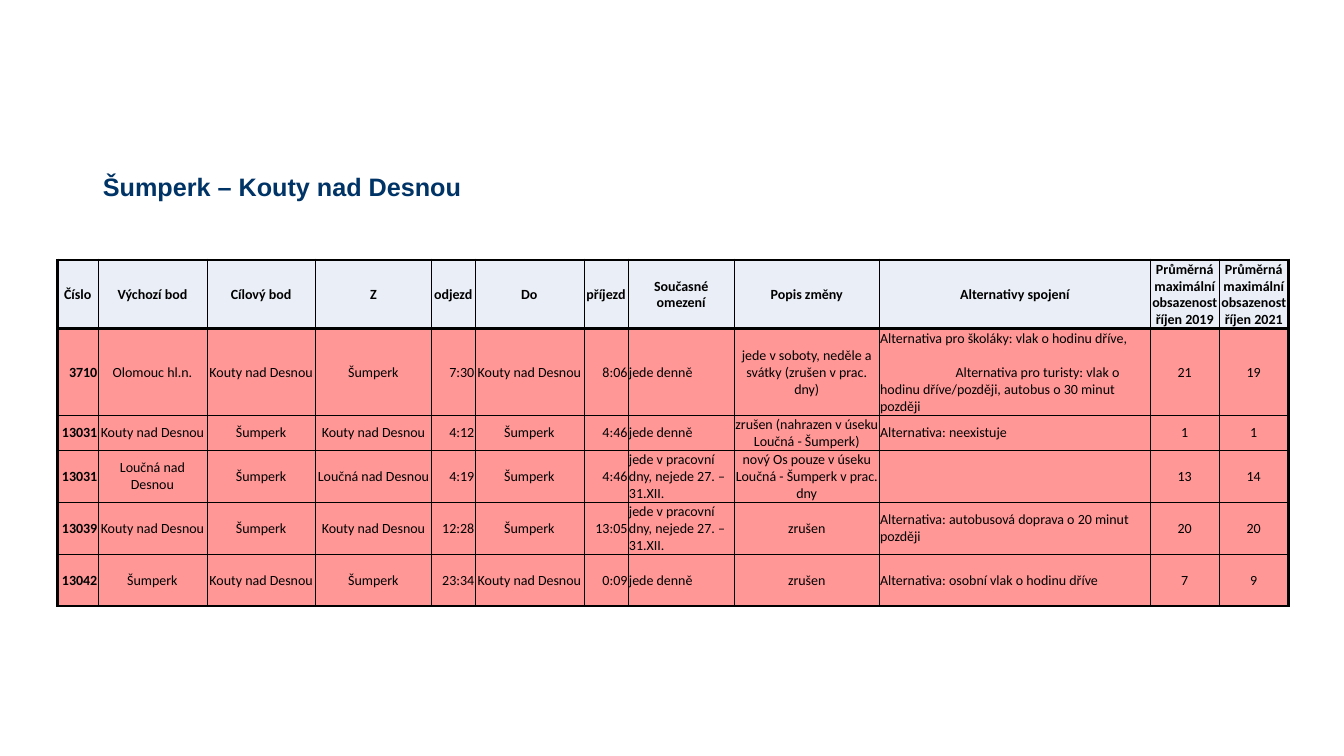
import pptx
import pptx.util
import pptx.dml.color
import pptx.enum.text
import pptx.oxml
import pptx.oxml.ns

Cm = pptx.util.Cm
Pt = pptx.util.Pt
RGBColor = pptx.dml.color.RGBColor
Align = pptx.enum.text.PP_ALIGN
Anchor = pptx.enum.text.MSO_ANCHOR

TITLE = "Šumperk – Kouty nad Desnou"
HEADER = [
    "Číslo", "Výchozí bod", "Cílový bod", "Z", "odjezd", "Do", "příjezd",
    "Současné omezení", "Popis změny", "Alternativy spojení",
    "Průměrná maximální obsazenost říjen 2019",
    "Průměrná maximální obsazenost říjen 2021",
]
TRAINS = [
    ["3710", "Olomouc hl.n.", "Kouty nad Desnou", "Šumperk", "7:30",
     "Kouty nad Desnou", "8:06", "jede denně",
     "jede v soboty, neděle a svátky (zrušen v prac. dny)",
     "Alternativa pro školáky: vlak o hodinu dříve,\n"
     "Alternativa pro turisty: vlak o hodinu dříve/později, autobus o 30 minut později",
     "21", "19"],
    ["13031", "Kouty nad Desnou", "Šumperk", "Kouty nad Desnou", "4:12",
     "Šumperk", "4:46", "jede denně",
     "zrušen (nahrazen v úseku Loučná - Šumperk)",
     "Alternativa: neexistuje", "1", "1"],
    ["13031", "Loučná nad Desnou", "Šumperk", "Loučná nad Desnou", "4:19",
     "Šumperk", "4:46", "jede v pracovní dny, nejede 27. – 31.XII.",
     "nový Os pouze v úseku Loučná - Šumperk v prac. dny", "", "13", "14"],
    ["13039", "Kouty nad Desnou", "Šumperk", "Kouty nad Desnou", "12:28",
     "Šumperk", "13:05", "jede v pracovní dny, nejede 27. – 31.XII.",
     "zrušen", "Alternativa: autobusová doprava o 20 minut později", "20", "20"],
    ["13042", "Šumperk", "Kouty nad Desnou", "Šumperk", "23:34",
     "Kouty nad Desnou", "0:09", "jede denně", "zrušen",
     "Alternativa: osobní vlak o hodinu dříve", "7", "9"],
]
COLUMN_WIDTHS = [1.02, 2.74, 2.74, 2.92, 1.1, 2.74, 1.12, 2.67, 3.66, 6.83, 1.73, 1.75]
ROW_HEIGHTS = [1.72, 2.18, 0.88, 1.31, 1.31, 1.31]
RIGHT_COLUMNS = {0, 4, 6}
LEFT_COLUMNS = {7, 9}

NAVY = RGBColor(0x00, 0x33, 0x66)
BLACK = RGBColor(0, 0, 0)
PALE_BLUE = RGBColor(0xEA, 0xEF, 0xF7)
SALMON = RGBColor(0xFF, 0x97, 0x97)
THIN, THICK = 0.25, 2.25


def write_text(frame, text, font="Calibri", size=10, color=BLACK, bold=False,
               align=Align.LEFT, indent=0):
    frame.word_wrap = True
    for index, line in enumerate(text.split("\n")):
        para = frame.add_paragraph() if index else frame.paragraphs[0]
        para.alignment = align
        if index:
            para.space_before = Pt(size * 1.2)
            para._p.get_or_add_pPr().set("indent", str(Cm(indent)))
        para.font.size = Pt(size)
        if line:
            span = para.add_run()
            span.text = line
            span.font.name = font
            span.font.size = Pt(size)
            span.font.bold = bold
            span.font.color.rgb = color


def draw_borders(cell, widths):
    properties = cell._tc.get_or_add_tcPr()
    for index, (side, width) in enumerate(widths.items()):
        border = pptx.oxml.parse_xml(
            f'<a:{side} {pptx.oxml.ns.nsdecls("a")} w="{Pt(width)}">'
            f'<a:solidFill><a:srgbClr val="{BLACK}"/></a:solidFill></a:{side}>')
        properties.insert(index, border)


def column_align(row, column):
    if row and column in RIGHT_COLUMNS:
        return Align.RIGHT
    if row and column in LEFT_COLUMNS:
        return Align.LEFT
    return Align.CENTER


def add_timetable(page):
    rows = [HEADER] + TRAINS
    last_row, last_column = len(rows) - 1, len(HEADER) - 1
    table = page.shapes.add_table(
        len(rows), len(HEADER), Cm(1.45), Cm(6.55),
        Cm(sum(COLUMN_WIDTHS)), Cm(sum(ROW_HEIGHTS))).table
    table.horz_banding = False
    table.first_row = False
    for column, width in zip(table.columns, COLUMN_WIDTHS):
        column.width = Cm(width)
    for row, height in zip(table.rows, ROW_HEIGHTS):
        row.height = Cm(height)
    for r, texts in enumerate(rows):
        for c, text in enumerate(texts):
            cell = table.cell(r, c)
            cell.margin_left = cell.margin_right = cell.margin_top = Cm(0.02)
            cell.margin_bottom = 0
            cell.vertical_anchor = Anchor.MIDDLE
            cell.fill.solid()
            cell.fill.fore_color.rgb = SALMON if r else PALE_BLUE
            write_text(cell.text_frame, text, bold=r == 0 or c == 0,
                       align=column_align(r, c), indent=1.9)
            draw_borders(cell, {
                "lnL": THICK if c == 0 else THIN,
                "lnR": THICK if c == last_column else THIN,
                "lnT": THICK if r <= 1 else THIN,
                "lnB": THICK if r in (0, last_row) else THIN,
            })


def main():
    deck = pptx.Presentation()
    deck.slide_width, deck.slide_height = Cm(33.87), Cm(19.05)
    page = deck.slides.add_slide(deck.slide_layouts.get_by_name("Title Only"))
    title = page.shapes.title
    title.left, title.top, title.width, title.height = Cm(2.34), Cm(4.2), Cm(16.94), Cm(1.02)
    title.text_frame.vertical_anchor = Anchor.TOP
    write_text(title.text_frame, TITLE, font="Arial", size=18, color=NAVY, bold=True)
    add_timetable(page)
    deck.save("out.pptx")


if __name__ == "__main__":
    main()
